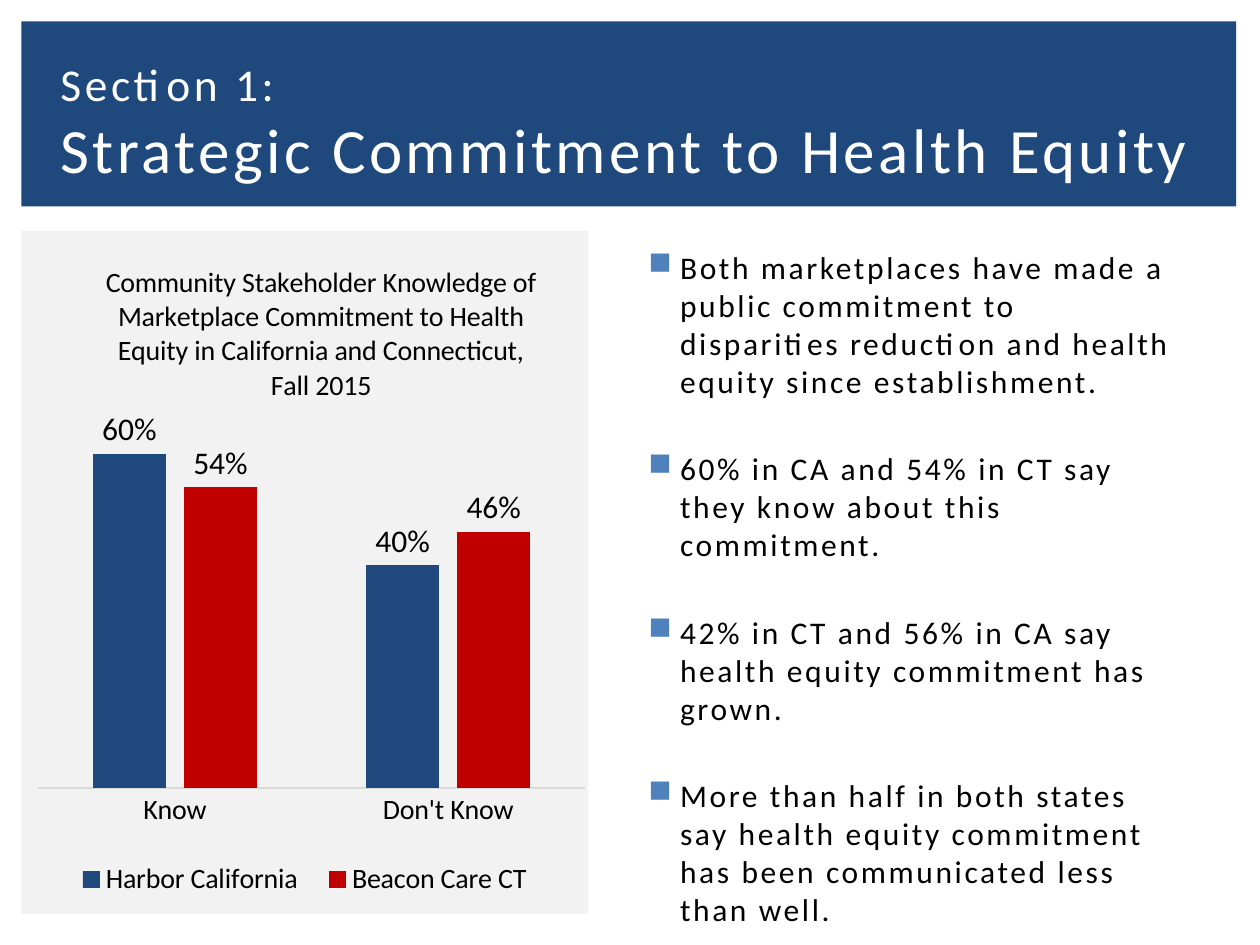
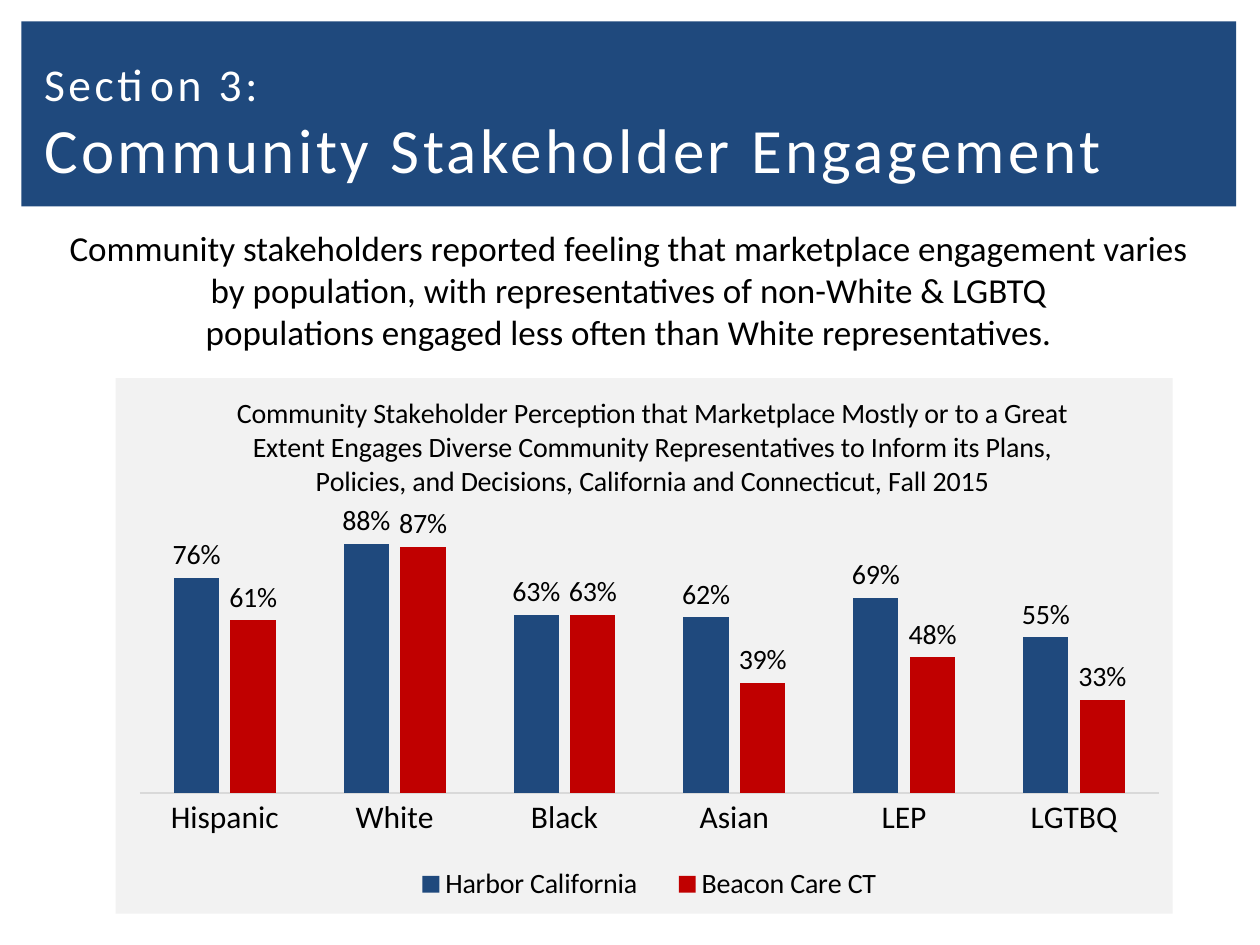
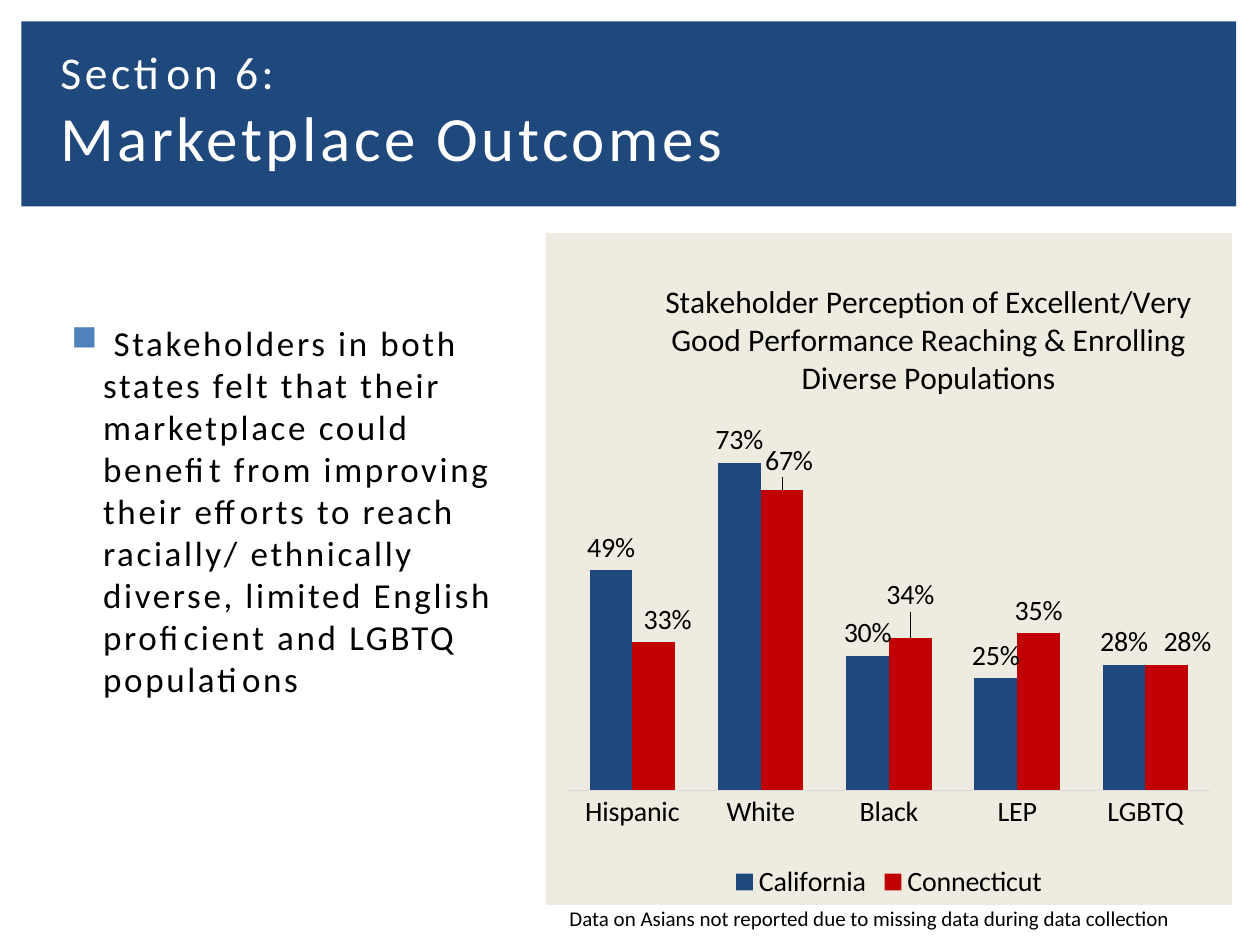
from lxml.etree import SubElement
from pptx import Presentation
from pptx.chart.data import CategoryChartData
from pptx.dml.color import RGBColor
from pptx.enum.chart import XL_CHART_TYPE as ChartType
from pptx.enum.chart import XL_LABEL_POSITION as LabelPosition
from pptx.enum.chart import XL_LEGEND_POSITION as LegendPosition
from pptx.enum.chart import XL_TICK_MARK as TickMark
from pptx.enum.shapes import MSO_SHAPE as Shape
from pptx.enum.text import MSO_ANCHOR as Anchor
from pptx.enum.text import PP_ALIGN as Align
from pptx.oxml import parse_xml
from pptx.oxml.ns import nsdecls, qn
from pptx.util import Cm, Pt

COLORS = {
    "navy": "1F497D", "red": "C00000", "bullet": "4F81BD", "axis": "D9D9D9",
    "gray": "F2F2F2", "sand": "EEECE1", "black": "000000", "white": "FFFFFF",
}
COLOR = {name: RGBColor.from_string(value) for name, value in COLORS.items()}
FONT = "Calibri"
BAND = (0.43, 0.43, 24.49, 3.73)
MARKETS = ("Harbor California", "Beacon Care CT")

SLIDES = [
    {
        "section": "Section 1:",
        "title": "Strategic Commitment to Health Equity",
        "title_at": (0.97, 0.99, 24.43, 2.92),
        "texts": [{
            "at": (12.7, 4.88, 11.23, 13.13), "size": 18, "bullets": True,
            "lines": [
                "Both marketplaces have made a public commitment to disparities "
                "reduction and health equity since establishment.",
                "60% in CA and 54% in CT say they know about this commitment.",
                "42% in CT and 56% in CA say health equity commitment has grown.",
                "More than half in both states say health equity commitment has "
                "been communicated less than well.",
            ],
        }],
        "chart": {
            "at": (0.43, 4.65, 11.43, 13.77), "fill": "gray",
            "title": "Community Stakeholder Knowledge of Marketplace Commitment "
                     "to Health Equity in California and Connecticut, Fall 2015",
            "title_size": 16, "title_at": (0.14, 0.04),
            "plot_at": (0.03, 0.245, 0.964, 0.571),
            "legend_at": (0.07, 0.92, 0.86, 0.06),
            "categories": ["Know", "Don't Know"],
            "series": dict(zip(MARKETS, [(0.6, 0.4), (0.54, 0.46)])),
            "maximum": 0.7, "gap": 150, "overlap": -25,
            "label_size": 18, "category_size": 16,
        },
    },
    {
        "section": "Section 3:",
        "title": "Community Stakeholder Engagement",
        "title_at": (0.64, 0.99, 24.77, 2.92),
        "texts": [{
            "at": (0.84, 4.45, 23.67, 2.82), "size": 20, "align": Align.CENTER,
            "lines": [
                "Community stakeholders reported feeling that marketplace "
                "engagement varies by population, with representatives of "
                "non-White & LGBTQ\vpopulations engaged less often than White "
                "representatives.",
            ],
        }],
        "chart": {
            "at": (2.33, 7.62, 21.31, 10.8), "fill": "gray",
            "title": "Community Stakeholder Perception that Marketplace Mostly "
                     "or to a Great Extent Engages Diverse Community "
                     "Representatives to Inform its Plans, Policies, and "
                     "Decisions, California and Connecticut, Fall 2015",
            "title_size": 16, "title_at": (0.11, 0.02),
            "plot_at": (0.023, 0.246, 0.964, 0.529),
            "legend_at": (0.26, 0.91, 0.49, 0.07),
            "categories": ["Hispanic", "White", "Black", "Asian", "LEP", "LGTBQ"],
            "series": dict(zip(MARKETS, [
                (0.76, 0.88, 0.63, 0.62, 0.69, 0.55),
                (0.61, 0.87, 0.63, 0.39, 0.48, 0.33),
            ])),
            "maximum": 1, "gap": 150, "overlap": -25,
            "label_size": 16, "category_size": 18,
        },
    },
    {
        "section": "Section 6:",
        "title": "Marketplace Outcomes",
        "title_at": (0.97, 0.74, 23.5, 2.92),
        "texts": [
            {
                "at": (11.23, 18.14, 13.77, 0.76), "size": 12,
                "lines": ["Data on Asians not reported due to missing data "
                          "during data collection"],
            },
            {
                "at": (1.07, 6.35, 9.32, 10.67), "size": 20, "bullets": True,
                "lines": [
                    " Stakeholders in both states felt that their marketplace "
                    "could benefit from improving their efforts to reach "
                    "racially/ ethnically diverse, limited English proficient "
                    "and LGBTQ populations",
                ],
            },
        ],
        "chart": {
            "at": (11, 4.7, 13.84, 13.54), "fill": "sand",
            "title": "Stakeholder Perception of Excellent/Very Good Performance "
                     "Reaching & Enrolling Diverse Populations",
            "title_size": 18, "title_at": (0.166, 0.06),
            "plot_at": (0.033, 0.295, 0.934, 0.535),
            "categories": ["Hispanic", "White", "Black", "LEP", "LGBTQ"],
            "series": {
                "California": (0.49, 0.73, 0.3, 0.25, 0.28),
                "Connecticut": (0.33, 0.67, 0.34, 0.35, 0.28),
            },
            "maximum": 0.8, "gap": 100, "overlap": 0,
            "label_size": 16, "category_size": 16,
            # Shifts of single labels in the second series
            "label_shifts": {0: (0.02, 0), 1: (0.01, -0.01),
                             2: (0, -0.03), 4: (0.03, 0)},
        },
    },
]


def format_font(font, size, color="black"):
    values = {"name": FONT, "size": Pt(size), "bold": False}
    for name, value in values.items():
        setattr(font, name, value)
    font.color.rgb = COLOR[color]


def set_layout(parent, index, fractions, modes):
    """Give a chart part a manual layout; fractions are x, y, width, height."""
    for old in parent.findall(qn("c:layout")):
        parent.remove(old)
    layout = parse_xml(f"<c:layout {nsdecls('c')}><c:manualLayout/></c:layout>")
    settings = list(modes.items()) + list(zip("xywh", fractions))
    for name, value in settings:
        SubElement(layout[0], qn(f"c:{name}")).set("val", str(value))
    parent.insert(index, layout)


EDGE = {"xMode": "edge", "yMode": "edge"}

deck = Presentation()
deck.slide_width, deck.slide_height = Cm(25.4), Cm(19.05)

for content in SLIDES:
    page = deck.slides.add_slide(deck.slide_layouts[6])

    # Title band
    band = page.shapes.add_shape(Shape.RECTANGLE, *map(Cm, BAND))
    band.shadow.inherit = False
    band.fill.solid()
    band.fill.fore_color.rgb = COLOR["navy"]
    band.line.fill.background()

    # Section and title
    box = page.shapes.add_textbox(*map(Cm, content["title_at"]))
    box.text_frame.word_wrap = True
    box.text_frame.vertical_anchor = Anchor.MIDDLE
    para = box.text_frame.paragraphs[0]
    for text, size in ((content["section"], 26), (content["title"], 36)):
        if para.runs:
            para.add_line_break()
        span = para.add_run()
        span.text = text
        format_font(span.font, size, "white")
        span.font._element.set("spc", "200")

    # Chart data and frame
    facts = content["chart"]
    data = CategoryChartData(number_format="0%")
    data.categories = facts["categories"]
    for name, values in facts["series"].items():
        data.add_series(name, values)
    chart = page.shapes.add_chart(
        ChartType.COLUMN_CLUSTERED, *map(Cm, facts["at"]), data).chart
    format_font(chart.font, 16)
    space = chart._chartSpace
    space.chart.addnext(parse_xml(
        f"<c:spPr {nsdecls('c', 'a')}><a:solidFill>"
        f"<a:srgbClr val='{COLORS[facts['fill']]}'/></a:solidFill>"
        "<a:ln><a:noFill/></a:ln></c:spPr>"))

    # Chart title and legend
    chart.has_title = True
    heading = chart.chart_title.text_frame
    heading.text = facts["title"]
    format_font(heading.paragraphs[0].runs[0].font, facts["title_size"])
    set_layout(chart.chart_title._element, 1, facts["title_at"], EDGE)
    chart.has_legend = True
    chart.legend.position = LegendPosition.BOTTOM
    chart.legend.include_in_layout = False
    format_font(chart.legend.font, 16)
    if "legend_at" in facts:
        set_layout(chart.legend._element, 1, facts["legend_at"], EDGE)

    # Axes and plot area
    values_axis, names_axis = chart.value_axis, chart.category_axis
    for name, value in {"minimum_scale": 0, "maximum_scale": facts["maximum"],
                        "has_major_gridlines": False, "visible": False}.items():
        setattr(values_axis, name, value)
    names_axis.major_tick_mark = TickMark.NONE
    names_axis.format.line.color.rgb = COLOR["axis"]
    names_axis.format.line.width = Pt(0.75)
    format_font(names_axis.tick_labels.font, facts["category_size"])
    set_layout(space.chart.plotArea, 0, facts["plot_at"],
               {"layoutTarget": "inner", **EDGE})

    # Columns and their labels
    plot = chart.plots[0]
    for name, value in {"gap_width": facts["gap"], "overlap": facts["overlap"],
                        "vary_by_categories": False}.items():
        setattr(plot, name, value)
    for series, color in zip(plot.series, ("navy", "red")):
        series.format.fill.solid()
        series.format.fill.fore_color.rgb = COLOR[color]
        labels = series.data_labels
        for name, value in {"show_value": True, "number_format": "0%",
                            "number_format_is_linked": False,
                            "position": LabelPosition.OUTSIDE_END}.items():
            setattr(labels, name, value)
        format_font(labels.font, facts["label_size"])
    for index, shift in facts.get("label_shifts", {}).items():
        label = plot.series[1].points[index].data_label
        label.position = LabelPosition.OUTSIDE_END
        format_font(label.font, facts["label_size"])
        set_layout(labels._element.findall(qn("c:dLbl"))[-1], 1, shift, {})

    # Body texts
    for block in content["texts"]:
        box = page.shapes.add_textbox(*map(Cm, block["at"]))
        frame = box.text_frame
        frame.word_wrap = True
        for number, line in enumerate(block["lines"]):
            para = frame.add_paragraph() if number else frame.paragraphs[0]
            para.text = line
            para.alignment = block.get("align")
            para.space_before = Pt(28.6 if number else 0)
            for span in para.runs:
                format_font(span.font, block["size"])
                if block.get("bullets"):
                    span.font._element.set("spc", "150")
            if block.get("bullets"):
                properties = para._p.get_or_add_pPr()
                properties.set("marL", str(Cm(0.76)))
                properties.set("indent", str(Cm(-0.64)))
                tint = SubElement(properties, qn("a:buClr"))
                SubElement(tint, qn("a:srgbClr")).set("val", COLORS["bullet"])
                SubElement(properties, qn("a:buChar")).set("char", "■")

deck.save("out.pptx")
